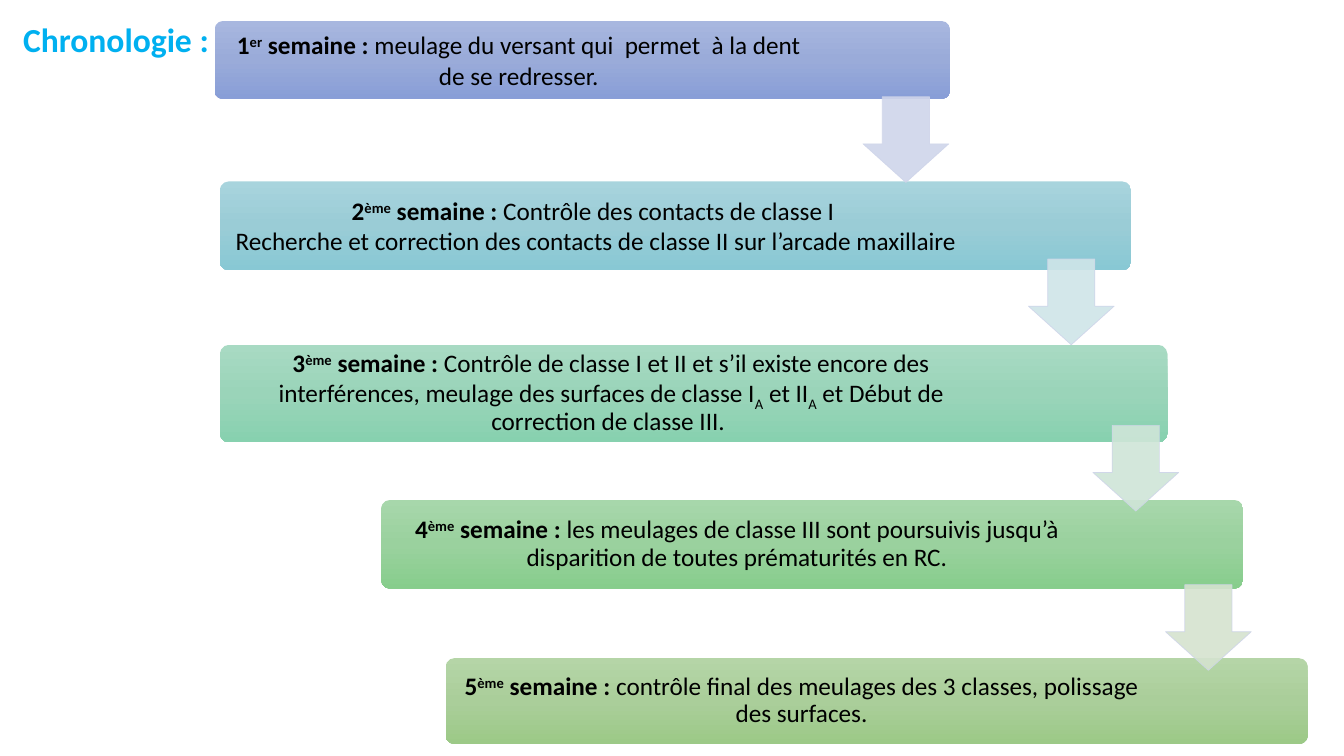
from copy import deepcopy

from lxml.etree import SubElement
from pptx import Presentation
from pptx.dml.color import RGBColor
from pptx.enum.shapes import MSO_SHAPE
from pptx.enum.text import MSO_ANCHOR, MSO_AUTO_SIZE, PP_ALIGN
from pptx.oxml.ns import qn
from pptx.util import Inches, Pt

TITLE = "Chronologie :"
COLORS = {"title": "00B0F0", "text": "000000", "arrow_line": "CFD5EA"}

# Each week: ordinal, paragraphs of (text, baseline) runs, line spacing,
# bar (left, top, width, height), text width, gradient from top to bottom
WEEKS = [
    ("1", "er",
     [[("meulage du versant qui  permet  à la dent de se redresser.", 0)]],
     None, (2.13, 0.21, 7.29, 0.77), 5.98, ("A8B7DF", "9AABD9", "889ED7")),
    ("2", "ème",
     [[("Contrôle des contacts de classe I ", 0)],
      [("Recherche et correction des contacts de classe II sur l’arcade maxillaire", 0)]],
     None, (2.18, 1.8, 9.04, 0.88), 7.41, ("A8D4DD", "9ACCD6", "88C8D4")),
    ("3", "ème",
     [[("Contrôle de classe I et II et s’il existe encore des interférences, "
        "meulage des surfaces de classe I", 0), ("A", -25), (" et II", 0), ("A", -25),
       (" et Début de correction de classe III. ", 0)]],
     0.9, (2.18, 3.42, 9.4, 0.97), 7.71, ("A8DAC3", "9AD4B9", "87D1AF")),
    ("4", "ème",
     [[("les meulages de classe III sont poursuivis jusqu’à disparition "
        "de toutes prématurités en RC.", 0)]],
     0.9, (3.78, 4.96, 8.55, 0.88), 7.01, ("A7D7AB", "9AD19E", "87CD8C")),
    ("5", "ème",
     [[("contrôle final des meulages des 3 classes, polissage des surfaces.", 0)]],
     0.9, (4.42, 6.53, 8.55, 0.85), 7.01, ("B5D5A7", "AACE9A", "9CC987")),
]
# Each arrow: left, top, fill
ARROWS = [
    (8.56, 0.96, "CFD5EA"), (10.2, 2.57, "CFE5E8"),
    (10.84, 4.22, "CFE5D8"), (11.56, 5.8, "D5E3CF"),
]
ARROW_SIZE = 0.85
TEXT_GAP = 0.025
FRAME_FORMAT = {
    "word_wrap": True, "vertical_anchor": MSO_ANCHOR.MIDDLE,
    "margin_left": Inches(0.07), "margin_right": Inches(0.07),
    "margin_top": Inches(0.07), "margin_bottom": Inches(0.07),
}


def set_all(target, values):
    for name, value in values.items():
        setattr(target, name, value)


def add_span(para, text, size, color, bold=False, baseline=0):
    span = para.add_run()
    span.text = text
    set_all(span.font, {"name": "Calibri", "size": Pt(size), "bold": bold})
    span.font.color.rgb = RGBColor.from_string(color)
    if baseline:
        span.font._element.set("baseline", str(baseline * 1000))


def add_shape(page, kind, place, adjustments):
    shape = page.shapes.add_shape(kind, *map(Inches, place))
    shape.shadow.inherit = False
    for index, value in enumerate(adjustments):
        shape.adjustments[index] = value
    return shape


def fill_gradient(shape, colors):
    shape.fill.gradient()
    shape.fill.gradient_angle = 270
    first = shape.fill._xPr.find(qn("a:gradFill")).find(qn("a:gsLst"))[0]
    first.addnext(deepcopy(first))
    for stop, color, position in zip(shape.fill.gradient_stops, colors, (0, 0.5, 1)):
        stop.color.rgb = RGBColor.from_string(color)
        stop.position = position


def make_translucent(fill, percent):
    color = fill._xPr.find(qn("a:solidFill"))[0]
    SubElement(color, qn("a:alpha")).set("val", str(percent * 1000))


def add_week(page, number, suffix, paragraphs, spacing, place, text_width, colors):
    bar = add_shape(page, MSO_SHAPE.ROUNDED_RECTANGLE, place, [0.1])
    fill_gradient(bar, colors)
    bar.line.fill.background()

    left, top, _, height = place
    text_place = (left + TEXT_GAP, top + TEXT_GAP, text_width, height - 2 * TEXT_GAP)
    frame = page.shapes.add_textbox(*map(Inches, text_place)).text_frame
    set_all(frame, FRAME_FORMAT)
    for index, runs in enumerate(paragraphs):
        para = frame.add_paragraph() if index else frame.paragraphs[0]
        set_all(para, {"alignment": PP_ALIGN.CENTER, "line_spacing": spacing})
        if index == 0:
            for text, baseline in ((number, 0), (suffix, 30), (" semaine : ", 0)):
                add_span(para, text, 18, COLORS["text"], True, baseline)
        for text, baseline in runs:
            add_span(para, text, 18, COLORS["text"], False, baseline)


def add_arrow(page, left, top, color):
    place = (left, top, ARROW_SIZE, ARROW_SIZE)
    arrow = add_shape(page, MSO_SHAPE.DOWN_ARROW, place, [0.55, 0.45])
    arrow.line.width = Pt(0.5)
    for fill, shade in ((arrow.fill, color), (arrow.line.fill, COLORS["arrow_line"])):
        fill.solid()
        fill.fore_color.rgb = RGBColor.from_string(shade)
        make_translucent(fill, 90)


def main():
    deck = Presentation()
    set_all(deck, {"slide_width": Inches(13.33), "slide_height": Inches(7.5)})
    page = deck.slides.add_slide(deck.slide_layouts[6])

    # Title
    title = page.shapes.add_textbox(*map(Inches, (0.13, 0.14, 10.95, 0.5)))
    set_all(title.text_frame, {"word_wrap": True,
                               "auto_size": MSO_AUTO_SIZE.SHAPE_TO_FIT_TEXT})
    add_span(title.text_frame.paragraphs[0], TITLE, 24, COLORS["title"], True)

    # Weekly steps, then the arrows over them
    for week in WEEKS:
        add_week(page, *week)
    for arrow in ARROWS:
        add_arrow(page, *arrow)

    deck.save("out.pptx")


if __name__ == "__main__":
    main()
